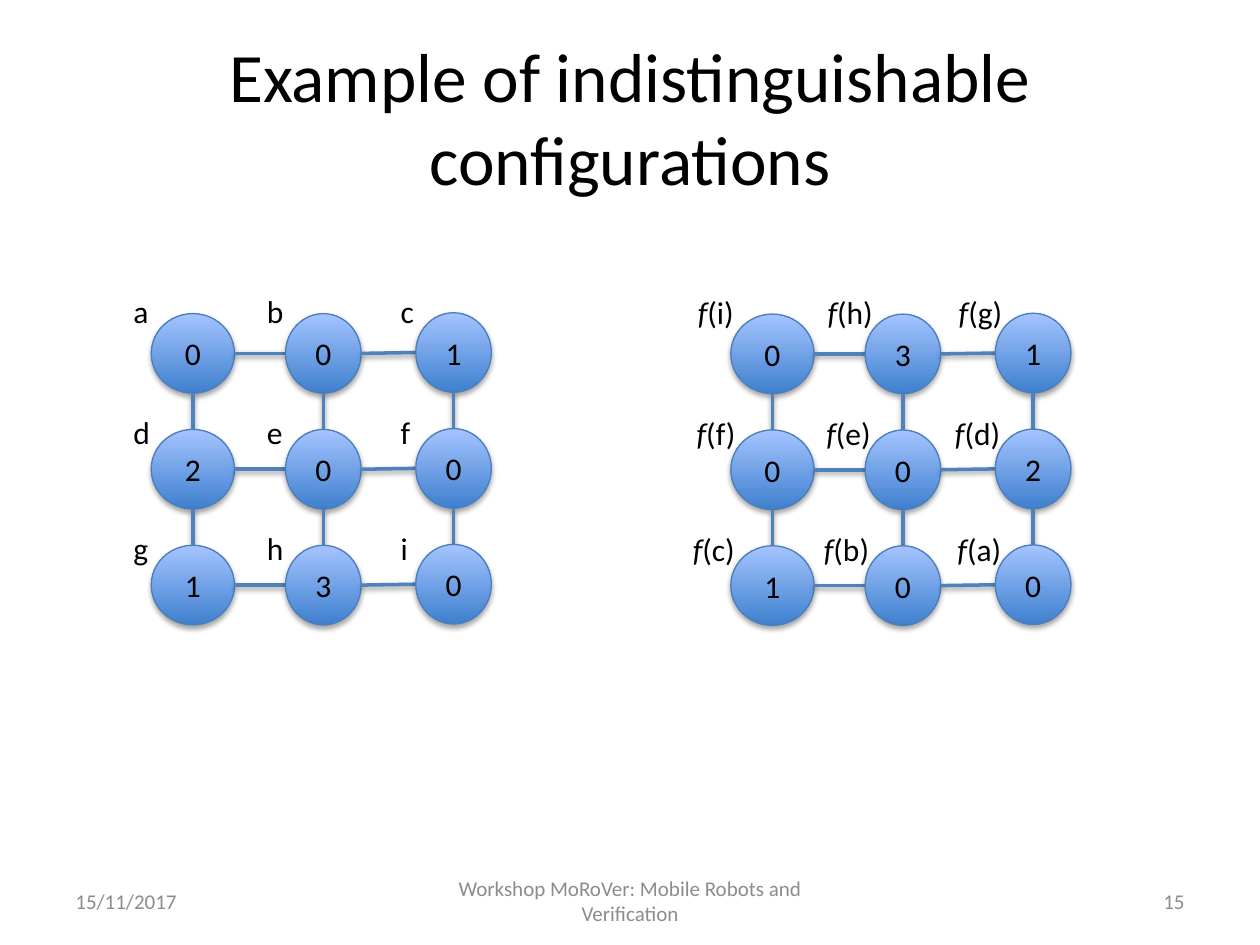
from lxml import etree
from pptx import Presentation
from pptx.dml.color import RGBColor
from pptx.enum.shapes import MSO_CONNECTOR, MSO_SHAPE
from pptx.enum.text import MSO_ANCHOR as Anchor, MSO_AUTO_SIZE as AutoSize, PP_ALIGN as Align
from pptx.oxml.ns import qn
from pptx.util import Pt

COLORS = {"text": "000000", "footer": "8C8C8C", "edge": "4F81BD", "outline": "4B7EBC",
          "node_dark": "3F80CE", "node_light": "A4C4FF", "shadow": "000000"}
COLUMNS = [(0, 47.6, 0), (76.8, 43.2, 0), (151.2, 43.2, -0.5)]
NODE_HEIGHT, ROW_PITCH = 45.5, 66.2
LABEL_TOPS, LABEL_HEIGHT = [-15.8, 53.4, 119.8], 29
LEFT_GRID = {
    "values": ["001", "200", "130"],
    "names": ["abc", "def", "ghi"],
    "prefix": "",
    "label_lefts": [[-17.3, 59, 135.4]] * 3,
    "label_widths": [[23, 23.8, 22.3], [23.8, 23.8, 20.9], [23, 23.8, 18.7]],
}
RIGHT_GRID = {
    "values": ["031", "002", "100"],
    "names": ["ihg", "fed", "cba"],
    "prefix": "f",
    "label_lefts": [[-25.9, 48.2, 123.1], [-26.6, 47.5, 121], [-28.8, 46.1, 122.4]],
    "label_widths": [[37.4, 42.5, 41.8], [38.9, 42.5, 42.5], [41, 42.5, 41.8]],
}


def rgb(name):
    """Return the named palette colour."""
    return RGBColor.from_string(COLORS[name])


def write_text(shape, text, size=18, color="text", align=Align.LEFT, anchor=Anchor.TOP,
               wrap=True, italic_prefix=""):
    """Write one formatted paragraph into a shape, after an optional italic prefix."""
    frame = shape.text_frame
    frame.word_wrap = wrap
    frame.auto_size = AutoSize.NONE if wrap else AutoSize.SHAPE_TO_FIT_TEXT
    frame.vertical_anchor = anchor
    paragraph = frame.paragraphs[0]
    paragraph.alignment = align
    for content, italic in ((italic_prefix, True), (text, False)):
        if content:
            run = paragraph.add_run()
            run.text = content
            run.font.name = "Calibri"
            run.font.size = Pt(size)
            run.font.italic = italic
            run.font.color.rgb = rgb(color)


def add_text(slide, box, text, **text_format):
    """Add a text box at left, top, width, height."""
    write_text(slide.shapes.add_textbox(*map(Pt, box)), text, **text_format)


def add_shadow(shape, distance, opacity):
    """Give a shape or connector a soft shadow falling downwards."""
    effects = etree.SubElement(shape._element.spPr, qn("a:effectLst"))
    shadow = etree.SubElement(effects, qn("a:outerShdw"), blurRad=str(Pt(3.1)),
                              dist=str(Pt(distance)), dir="5400000", rotWithShape="0")
    color = etree.SubElement(shadow, qn("a:srgbClr"), val=COLORS["shadow"])
    etree.SubElement(color, qn("a:alpha"), val=str(opacity * 1000))


def add_node(slide, box, value):
    """Add a shaded ellipse holding a value."""
    node = slide.shapes.add_shape(MSO_SHAPE.OVAL, *map(Pt, box))
    node.fill.gradient()
    node.fill.gradient_angle = 90
    for stop, name in zip(node.fill.gradient_stops, ("node_dark", "node_light")):
        stop.color.rgb = rgb(name)
    node.line.color.rgb = rgb("outline")
    node.line.width = Pt(0.75)
    add_shadow(node, 1.8, 35)
    write_text(node, value, align=Align.CENTER, anchor=Anchor.MIDDLE)


def add_edge(slide, start, end):
    """Add a straight edge between two points."""
    edge = slide.shapes.add_connector(MSO_CONNECTOR.STRAIGHT, *map(Pt, (*start, *end)))
    edge.line.color.rgb = rgb("edge")
    edge.line.width = Pt(2)
    add_shadow(edge, 1.6, 38)


def add_grid(slide, left, top, grid):
    """Add a labelled three by three graph with its first node at left, top."""
    boxes = [[(left + x, top + row * ROW_PITCH + shift, width, NODE_HEIGHT)
              for x, width, shift in COLUMNS] for row in range(3)]
    for row, row_boxes in enumerate(boxes):
        for column, box in enumerate(row_boxes):
            x, y, width, height = box
            add_node(slide, box, grid["values"][row][column])
            if column < 2:
                next_x, next_y = row_boxes[column + 1][:2]
                add_edge(slide, (x + width, y + height / 2), (next_x, next_y + height / 2))
            if row < 2:
                center = x + width / 2
                add_edge(slide, (center, y + height), (center, y + ROW_PITCH))
    for row, names in enumerate(grid["names"]):
        for column, name in enumerate(names):
            label_box = (left + grid["label_lefts"][row][column], top + LABEL_TOPS[row],
                         grid["label_widths"][row][column], LABEL_HEIGHT)
            add_text(slide, label_box, f"({name})" if grid["prefix"] else name,
                     wrap=False, italic_prefix=grid["prefix"])


def add_footer(slide, left, top, height):
    """Add the date, event and slide number along the bottom."""
    for x, width, text, align in (
            (0, 168, "15/11/2017", Align.LEFT),
            (210, 228, "Workshop MoRoVer: Mobile Robots and Verification", Align.CENTER),
            (480, 168, "15", Align.RIGHT)):
        add_text(slide, (left + x, top, width, height), text, size=12, color="footer",
                 align=align, anchor=Anchor.MIDDLE)


def main():
    """Build and save the presentation."""
    presentation = Presentation()
    presentation.slide_width, presentation.slide_height = Pt(720), Pt(540)
    slide = presentation.slides.add_slide(presentation.slide_layouts[6])
    add_text(slide, (36, 21.6, 648, 90), "Example of indistinguishable configurations",
             size=39.6, align=Align.CENTER, anchor=Anchor.MIDDLE)
    add_footer(slide, 36, 500.5, 28.75)
    add_grid(slide, 86.4, 179.2, LEFT_GRID)
    add_grid(slide, 417.6, 179.5, RIGHT_GRID)
    presentation.save("out.pptx")


if __name__ == "__main__":
    main()
